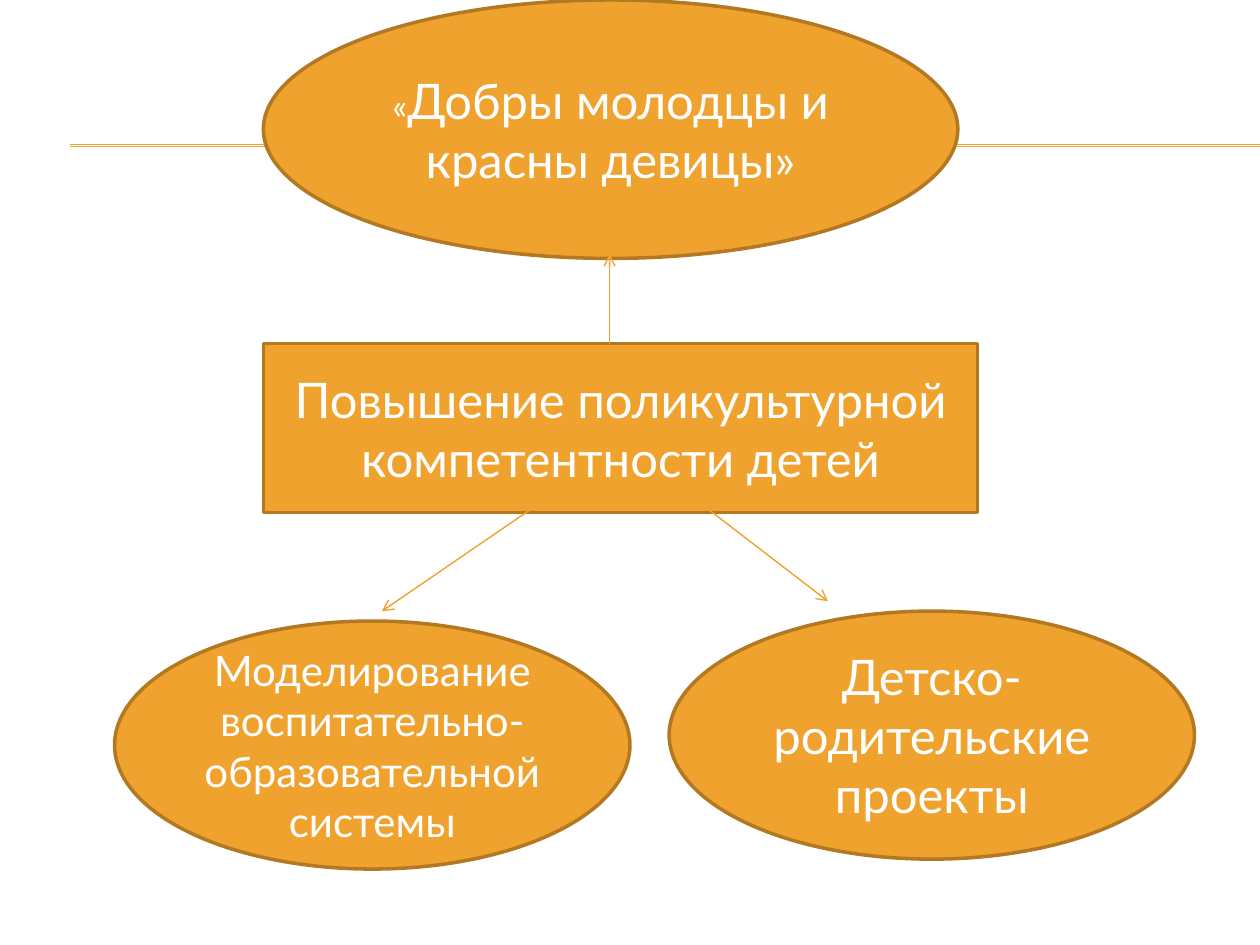
from lxml.etree import SubElement
from pptx import Presentation
from pptx.dml.color import RGBColor
from pptx.enum.shapes import MSO_CONNECTOR, MSO_SHAPE
from pptx.enum.text import MSO_ANCHOR, PP_ALIGN
from pptx.oxml.ns import qn
from pptx.util import Cm, Pt

COLORS = {"fill": "F0A22E", "border": "B27822", "text": "FFFFFF"}
FONT = "Lato"
RULES = [((1.42, y), (25.4, y)) for y in (2.92, 2.95)]
IDEAS = [
    (MSO_SHAPE.OVAL, (2.31, 12.52, 10.39, 5),
     [("Моделирование воспитательно-образовательной системы", 24)]),
    (MSO_SHAPE.RECTANGLE, (5.31, 6.93, 14.4, 3.4),
     [("Повышение поликультурной компетентности детей", 28)]),
    (MSO_SHAPE.OVAL, (5.31, 0, 14, 5.21),
     [("«", 20), ("Добры молодцы и красны девицы»", 28)]),
    (MSO_SHAPE.OVAL, (13.49, 12.32, 10.59, 5),
     [("Детско-родительские проекты", 28)]),
]
ARROWS = [
    ((12.29, 6.93), (12.29, 5.13)),
    ((14.1, 10.13), (16.69, 12.12)),
    ((10.9, 10.13), (7.7, 12.32)),
]


def color(name):
    return RGBColor.from_string(COLORS[name])


def add_line(slide, start, end, width, arrow=False):
    line = slide.shapes.add_connector(
        MSO_CONNECTOR.STRAIGHT, *map(Cm, start + end))
    line.line.color.rgb = color("fill")
    line.line.width = Pt(width)
    properties = line._element.spPr
    if arrow:
        SubElement(properties.find(qn("a:ln")), qn("a:tailEnd"), type="arrow")
    SubElement(properties, qn("a:effectLst"))


def add_idea(slide, outline, box, pieces):
    idea = slide.shapes.add_shape(outline, *map(Cm, box))
    idea.shadow.inherit = False
    idea.fill.solid()
    idea.fill.fore_color.rgb = color("fill")
    idea.line.color.rgb = color("border")
    idea.line.width = Pt(2)
    frame = idea.text_frame
    frame.word_wrap = True
    frame.vertical_anchor = MSO_ANCHOR.MIDDLE
    paragraph = frame.paragraphs[0]
    paragraph.alignment = PP_ALIGN.CENTER
    paragraph.font.name = FONT
    paragraph.font.color.rgb = color("text")
    for words, size in pieces:
        run = paragraph.add_run()
        run.text = words
        run.font.size = Pt(size)


def main():
    """Build the slide about children's multicultural competence."""
    deck = Presentation()
    deck.slide_width, deck.slide_height = Cm(25.4), Cm(19.05)
    slide = deck.slides.add_slide(deck.slide_layouts[6])
    for start, end in RULES:
        add_line(slide, start, end, 0.75)
    for outline, box, pieces in IDEAS:
        add_idea(slide, outline, box, pieces)
    for start, end in ARROWS:
        add_line(slide, start, end, 0.79, arrow=True)
    deck.save("out.pptx")


if __name__ == "__main__":
    main()
